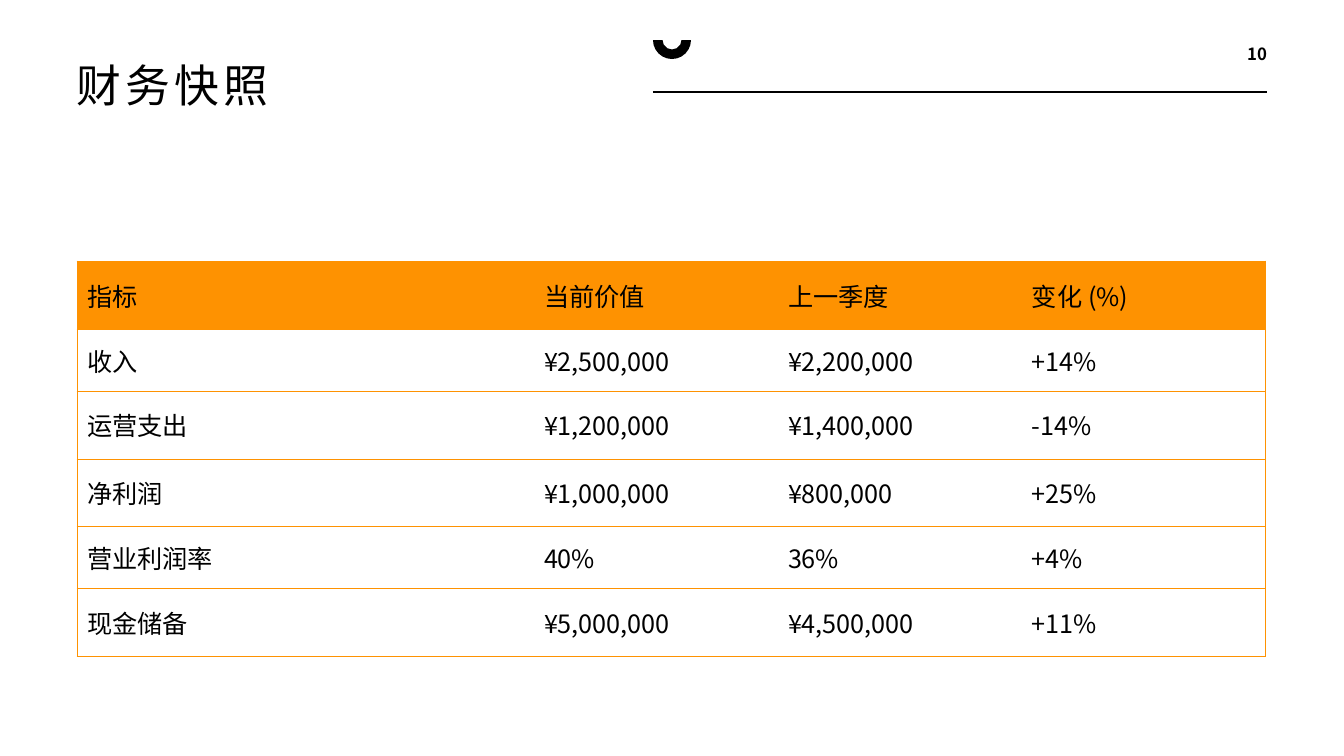
from lxml import etree
from pptx import Presentation
from pptx.dml.color import RGBColor
from pptx.enum.shapes import MSO_CONNECTOR, MSO_SHAPE
from pptx.enum.text import MSO_ANCHOR, PP_ALIGN
from pptx.oxml.ns import qn
from pptx.util import Emu, Pt

FONT = "Noto Sans CJK SC"
BLACK, ORANGE = "000000", "FE9201"
TITLE, PAGE = "财务快照", "10"
ROWS = [
    ("指标", "当前价值", "上一季度", "变化 (%)"),
    ("收入", "¥2,500,000", "¥2,200,000", "+14%"),
    ("运营支出", "¥1,200,000", "¥1,400,000", "-14%"),
    ("净利润", "¥1,000,000", "¥800,000", "+25%"),
    ("营业利润率", "40%", "36%", "+4%"),
    ("现金储备", "¥5,000,000", "¥4,500,000", "+11%"),
]
COL_WIDTHS = [457, 244, 244, 244]
ROW_HEIGHTS = [68, 62, 68, 68, 62, 68]
LEFT, RIGHT, TABLE_TOP = 77, 1267, 261
RULE_LEFT, RULE_Y = 653, 92


def px(n):
    return Emu(round(n * 914400 / 100.8))


def rgb(value):
    return RGBColor.from_string(value)


def style(p, size, bold=False):
    for r in p.runs:
        r.font.size, r.font.bold, r.font.name = Pt(size), bold, FONT
        r.font.color.rgb = rgb(BLACK)
        ea = etree.SubElement(r.font._element, qn("a:ea"))
        ea.set("typeface", FONT)


def add_text(slide, text, box, right_inset, size, bold=False):
    sp = slide.shapes.add_textbox(*map(px, box))
    tf = sp.text_frame
    tf.word_wrap = True
    tf.margin_left, tf.margin_right = 0, px(right_inset)
    tf.margin_top = tf.margin_bottom = px(5)
    tf.text = text
    style(tf.paragraphs[0], size, bold)
    return tf


def set_border(cell, side, color):
    tc_pr = cell._tc.get_or_add_tcPr()
    ln = etree.SubElement(tc_pr, qn(f"a:ln{side}"), w=str(Pt(0.75)))
    if color:
        fill = etree.SubElement(ln, qn("a:solidFill"))
        etree.SubElement(fill, qn("a:srgbClr"), val=color)
    else:
        etree.SubElement(ln, qn("a:noFill"))


def add_header(slide):
    rule = slide.shapes.add_connector(
        MSO_CONNECTOR.STRAIGHT, px(RULE_LEFT), px(RULE_Y), px(RIGHT), px(RULE_Y))
    rule.line.color.rgb, rule.line.width = rgb(BLACK), Pt(0.75)
    etree.SubElement(rule._element.spPr, qn("a:effectLst"))

    arc = slide.shapes.add_shape(
        MSO_SHAPE.BLOCK_ARC, px(RULE_LEFT), px(21), px(38), px(38))
    arc.rotation = 180
    arc.shadow.inherit = False
    arc.fill.solid()
    arc.fill.fore_color.rgb = rgb(BLACK)
    arc.line.fill.background()

    p = add_text(slide, TITLE, (LEFT, 59, 549, 200), 10, 32).paragraphs[0]
    p.line_spacing = 0.9
    p.runs[0].font._element.set("spc", "300")

    tf = add_text(slide, PAGE, (1229, 17, 38, 52), 0, 12, True)
    tf.vertical_anchor = MSO_ANCHOR.BOTTOM
    tf.paragraphs[0].alignment = PP_ALIGN.RIGHT


def add_metrics(slide):
    last = len(COL_WIDTHS) - 1
    table = slide.shapes.add_table(
        len(ROWS), len(COL_WIDTHS), px(LEFT), px(TABLE_TOP),
        px(sum(COL_WIDTHS)), px(sum(ROW_HEIGHTS))).table
    table.first_row = table.horz_banding = False
    for col, width in zip(table.columns, COL_WIDTHS):
        col.width = px(width)
    for row, height in zip(table.rows, ROW_HEIGHTS):
        row.height = px(height)
    for i, values in enumerate(ROWS):
        for j, value in enumerate(values):
            cell = table.cell(i, j)
            cell.text_frame.text = value
            cell.vertical_anchor = MSO_ANCHOR.MIDDLE
            style(cell.text_frame.paragraphs[0], 18)
            set_border(cell, "L", ORANGE if j == 0 else None)
            set_border(cell, "R", ORANGE if j == last else None)
            set_border(cell, "T", ORANGE)
            set_border(cell, "B", ORANGE)
            if i == 0:
                cell.fill.solid()
                cell.fill.fore_color.rgb = rgb(ORANGE)
            else:
                cell.fill.background()


def main():
    prs = Presentation()
    prs.slide_width, prs.slide_height = px(1344), px(756)
    slide = prs.slides.add_slide(prs.slide_layouts[6])
    add_header(slide)
    add_metrics(slide)
    prs.save("out.pptx")


if __name__ == "__main__":
    main()
